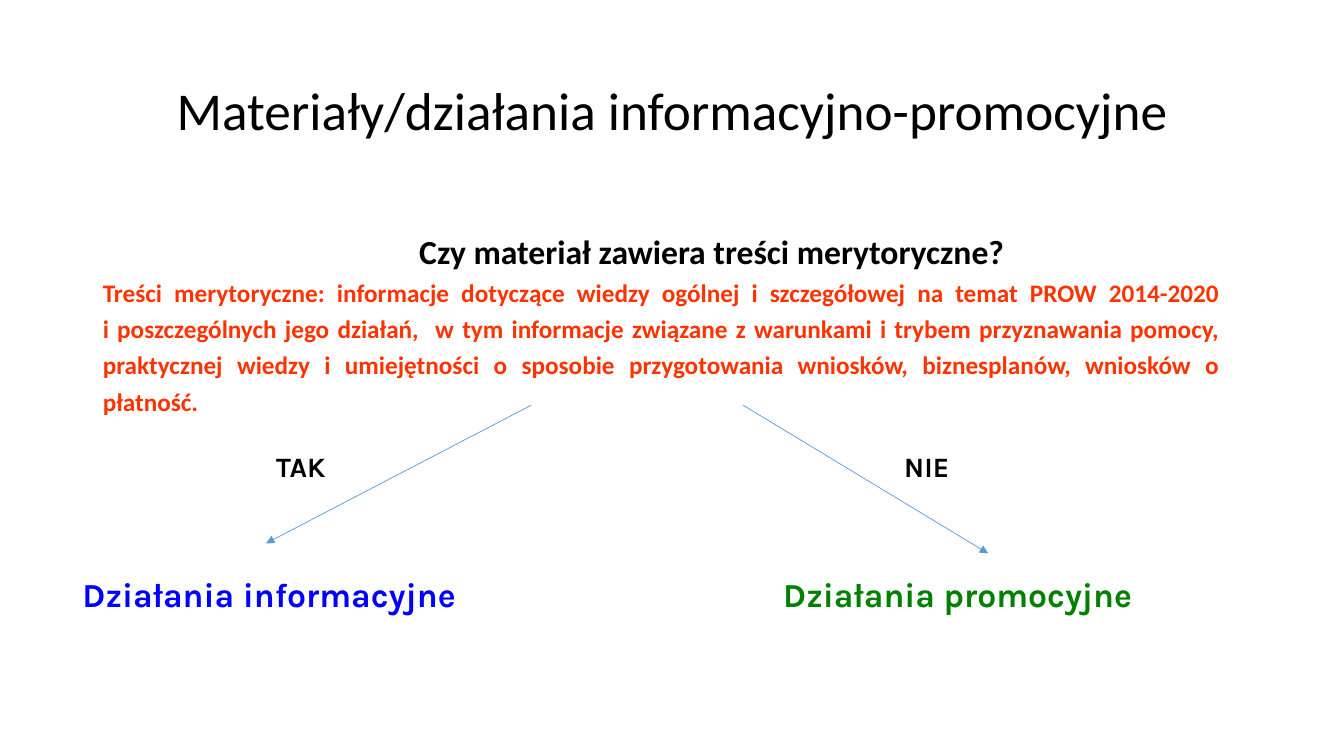
"""Build the slide on information and promotion activities."""
from dataclasses import dataclass

from lxml import etree
from pptx import Presentation
from pptx.dml.color import RGBColor
from pptx.enum.shapes import MSO_CONNECTOR
from pptx.enum.text import MSO_ANCHOR, MSO_AUTO_SIZE, PP_ALIGN
from pptx.oxml.ns import qn
from pptx.util import Inches, Pt

STRAIGHT = MSO_CONNECTOR.STRAIGHT
MIDDLE, TOP = MSO_ANCHOR.MIDDLE, MSO_ANCHOR.TOP
NO_AUTOFIT = MSO_AUTO_SIZE.NONE
LEFT, CENTER, JUSTIFY = PP_ALIGN.LEFT, PP_ALIGN.CENTER, PP_ALIGN.JUSTIFY


@dataclass(frozen=True)
class Theme:
    """Fonts, colours and type sizes of the slide."""
    main_font: str = "Calibri"
    label_font: str = "Karla"
    ink: str = "000000"
    definition: str = "FF3300"
    information: str = "0000FF"
    promotion: str = "008000"
    arrow: str = "5B9BD5"
    title_size: int = 38
    heading_size: int = 24
    answer_size: int = 20
    definition_size: int = 18
    arrow_width: float = 0.5


class SlideBuilder:
    """Places elements on one slide, with lengths in percent of its size."""

    def __init__(self, deck, theme):
        """Add a title and body slide to the deck."""
        self.deck = deck
        self.theme = theme
        self.slide = deck.slides.add_slide(deck.slide_layouts[1])

    def point(self, across, down):
        """Turn shares of the slide into lengths."""
        return (round(self.deck.slide_width * across / 100),
                round(self.deck.slide_height * down / 100))

    def place(self, holder, area, anchor):
        """Move a placeholder and set its text frame."""
        holder.left, holder.top = self.point(*area[:2])
        holder.width, holder.height = self.point(*area[2:])
        frame = holder.text_frame
        frame.word_wrap = True
        frame.auto_size = NO_AUTOFIT
        frame.vertical_anchor = anchor
        return frame

    def fill_paragraph(self, paragraph, text, font, size, color, bold=True,
                       align=LEFT, spacing=1.0):
        """Fill and format a paragraph."""
        paragraph.text = text
        paragraph.alignment = align
        paragraph.line_spacing = spacing
        paragraph.space_before = Pt(0)
        paragraph.font.name = font
        paragraph.font.size = Pt(size)
        paragraph.font.bold = bold
        paragraph.font.color.rgb = RGBColor.from_string(color)

    def title(self, text, area):
        """Fill the title placeholder."""
        frame = self.place(self.slide.shapes.title, area, MIDDLE)
        self.fill_paragraph(frame.paragraphs[0], text, self.theme.main_font,
                            self.theme.title_size, self.theme.ink, False,
                            CENTER, 0.9)

    def body(self, question, definition, area):
        """Fill the body placeholder with a question and its definition."""
        theme = self.theme
        frame = self.place(self.slide.placeholders[1], area, TOP)
        self.fill_paragraph(frame.paragraphs[0], question, theme.main_font,
                            theme.heading_size, theme.ink, align=CENTER)
        self.fill_paragraph(frame.add_paragraph(), definition,
                            theme.main_font, theme.definition_size,
                            theme.definition, align=JUSTIFY, spacing=1.2)
        for paragraph, margin in zip(frame.paragraphs, (Inches(1), 0)):
            properties = paragraph._p.get_or_add_pPr()
            properties.set("marL", str(int(margin)))
            properties.set("indent", "0")
            bullet = etree.Element(qn("a:buNone"))
            properties.find(qn("a:spcBef")).addnext(bullet)

    def label(self, text, area, size, color):
        """Add a bold label."""
        box = self.slide.shapes.add_textbox(*self.point(*area[:2]),
                                            *self.point(*area[2:]))
        box.text_frame.word_wrap = True
        self.fill_paragraph(box.text_frame.paragraphs[0], text,
                            self.theme.label_font, size, color)

    def arrow(self, start, end):
        """Add a thin arrow from start to end."""
        connector = self.slide.shapes.add_connector(
            STRAIGHT, *self.point(*start), *self.point(*end))
        connector.line.color.rgb = RGBColor.from_string(self.theme.arrow)
        connector.line.width = Pt(self.theme.arrow_width)
        properties = connector._element.spPr
        etree.SubElement(properties.find(qn("a:ln")), qn("a:tailEnd"),
                         type="triangle")
        etree.SubElement(properties, qn("a:effectLst"))


def main():
    """Build and save the deck."""
    deck = Presentation()
    deck.slide_width, deck.slide_height = Inches(13.33), Inches(7.5)
    theme = Theme()
    builder = SlideBuilder(deck, theme)

    builder.title("Materiały/działania informacyjno-promocyjne",
                  (6.9, 5.33, 86.27, 19.33))
    builder.body(
        "Czy materiał zawiera treści merytoryczne?",
        "Treści merytoryczne: informacje dotyczące wiedzy ogólnej i "
        "szczegółowej na temat PROW 2014-2020\n"
        "i poszczególnych jego działań,  w tym informacje związane z "
        "warunkami i trybem przyznawania pomocy, praktycznej wiedzy i "
        "umiejętności o sposobie przygotowania wniosków, biznesplanów, "
        "wniosków o płatność.",
        (6.9, 29.87, 84.62, 30.13))

    branches = (
        ("TAK", 19.8, 5.7, (39.53, 53.6), (19.8, 71.87),
         "Działania informacyjne", 5.4, theme.information),
        ("NIE", 66.54, 10.65, (55.29, 53.6), (73.52, 73.2),
         "Działania promocyjne", 57.54, theme.promotion),
    )
    for (answer, answer_left, answer_width, start, end,
         outcome, outcome_left, color) in branches:
        builder.arrow(start, end)
        builder.label(outcome, (outcome_left, 75.2, 31.88, 6.67),
                      theme.heading_size, color)
        builder.label(answer, (answer_left, 58.8, answer_width, 5.73),
                      theme.answer_size, theme.ink)

    deck.save("out.pptx")


if __name__ == "__main__":
    main()
